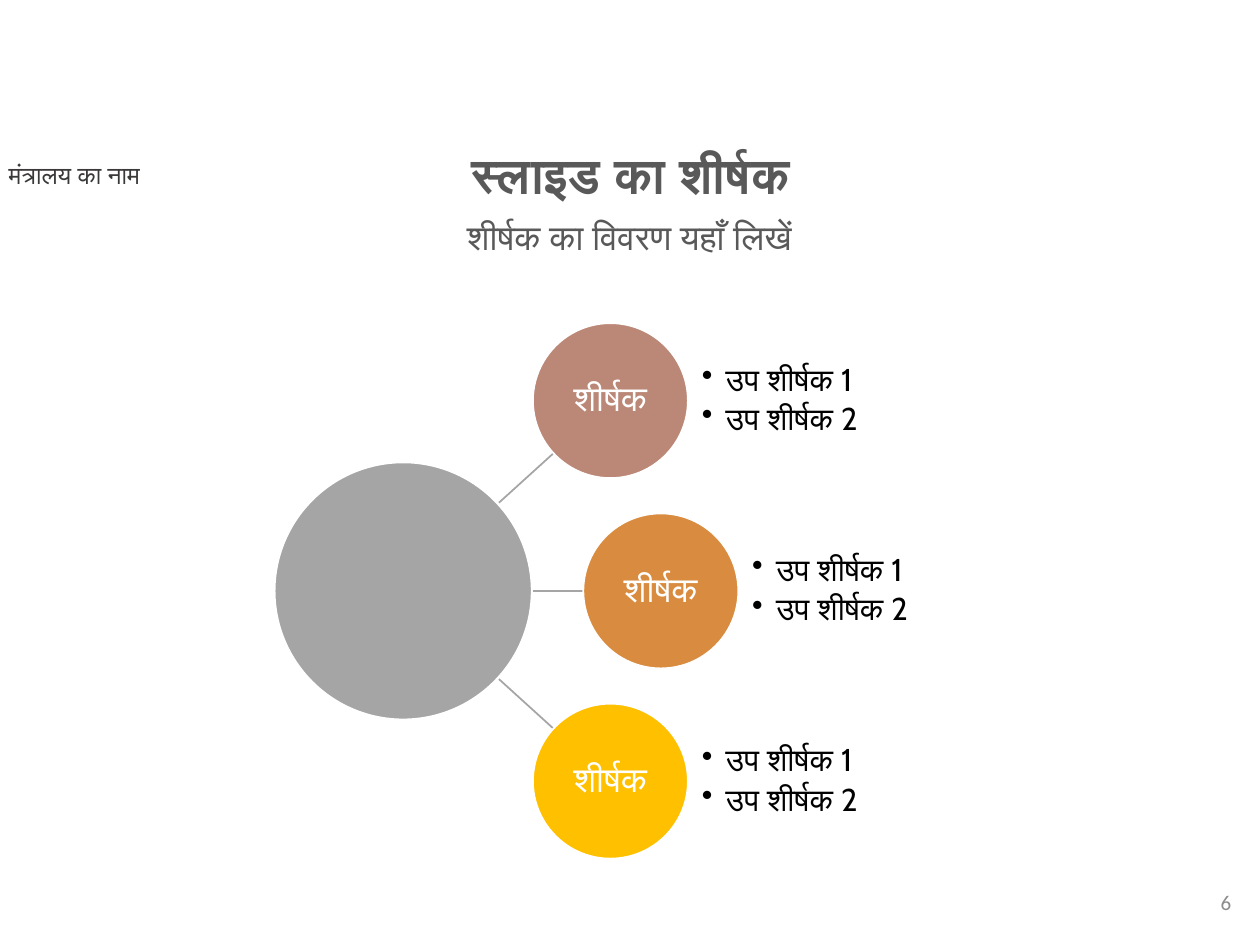
from dataclasses import dataclass

from lxml import etree
from pptx import Presentation
from pptx.dml.color import RGBColor
from pptx.enum.shapes import MSO_CONNECTOR, MSO_SHAPE
from pptx.enum.text import MSO_ANCHOR, PP_ALIGN
from pptx.oxml.ns import qn
from pptx.util import Inches, Pt

OVAL = MSO_SHAPE.OVAL
LINE = MSO_CONNECTOR.STRAIGHT
TOP, MIDDLE = MSO_ANCHOR.TOP, MSO_ANCHOR.MIDDLE
LEFT, CENTER, RIGHT = PP_ALIGN.LEFT, PP_ALIGN.CENTER, PP_ALIGN.RIGHT


@dataclass(frozen=True)
class Theme:
    body: str = "Calibri"
    accent: str = "Cabin"
    white: str = "FFFFFF"
    black: str = "000000"
    gray: str = "A5A5A5"
    dark: str = "595959"
    label: str = "3B3838"
    pale: str = "8C8C8C"
    nodes: tuple = ("BB8776", "D98C3F", "FFC000")
    title: int = 28
    head: int = 20
    item: int = 18
    name: int = 14
    page: int = 12


THEME = Theme()


def rgb(code):
    return RGBColor.from_string(code)


def style(para, font, size, color, bold=False):
    for run in para.runs:
        run.font.name = font
        run.font.size = Pt(size)
        run.font.color.rgb = rgb(color)
        run.font.bold = bold


def inset(frame, side, edge):
    frame.margin_left = frame.margin_right = Inches(side)
    frame.margin_top = frame.margin_bottom = Inches(edge)


def add_text(slide, box, text, size, color, align=LEFT, anchor=TOP,
             bold=False, space=1.0):
    frame = slide.shapes.add_textbox(*map(Inches, box)).text_frame
    frame.word_wrap = True
    frame.vertical_anchor = anchor
    para = frame.paragraphs[0]
    para.text = text
    para.alignment = align
    para.line_spacing = space
    style(para, THEME.body, size, color, bold)


def add_disc(slide, left, mid, size, color, text=""):
    disc = slide.shapes.add_shape(
        OVAL, Inches(left), Inches(mid - size / 2), Inches(size), Inches(size))
    disc.shadow.inherit = False
    disc.fill.solid()
    disc.fill.fore_color.rgb = rgb(color)
    disc.line.color.rgb = rgb(THEME.white)
    disc.line.width = Pt(1)
    if text:
        frame = disc.text_frame
        inset(frame, 0.01, 0.01)
        frame.vertical_anchor = MIDDLE
        para = frame.paragraphs[0]
        para.text = text
        para.alignment = CENTER
        para.line_spacing = 0.9
        style(para, THEME.accent, THEME.head, THEME.white)


def add_list(slide, box, items):
    frame = slide.shapes.add_textbox(*map(Inches, box)).text_frame
    frame.word_wrap = True
    frame.vertical_anchor = MIDDLE
    inset(frame, 0, 0)
    for i, item in enumerate(items):
        para = frame.add_paragraph() if i else frame.paragraphs[0]
        para.text = item
        para.line_spacing = 0.9
        para.space_after = Pt(3)
        props = para._p.get_or_add_pPr()
        props.set("marL", str(Inches(0.19)))
        props.set("indent", str(-Inches(0.19)))
        etree.SubElement(props, qn("a:buChar")).set("char", "•")
        style(para, THEME.accent, THEME.item, THEME.black)


def add_link(slide, *ends):
    link = slide.shapes.add_connector(LINE, *map(Inches, ends))
    link.line.color.rgb = rgb(THEME.gray)
    link.line.width = Pt(1)
    etree.SubElement(link._element.spPr, qn("a:effectLst"))


def main():
    deck = Presentation()
    deck.slide_width, deck.slide_height = Inches(10), Inches(7.5)
    slide = deck.slides.add_slide(deck.slide_layouts[6])

    add_text(slide, (-0.03, 1.22, 2.18, 0.34), "मंत्रालय का नाम",
             THEME.name, THEME.label)

    mid, step, size = 4.69, 1.51, 1.23
    for turn in (-1, 1):
        add_link(slide, 3.96, mid + turn * 0.7, 4.39, mid + turn * 1.09)
    add_link(slide, 4.23, mid, 4.63, mid)
    add_disc(slide, 2.18, mid, 2.04, THEME.gray)

    for i, (left, color) in enumerate(zip((4.23, 4.63, 4.23), THEME.nodes)):
        y = mid + (i - 1) * step
        add_disc(slide, left, y, size, color, "शीर्षक")
        add_list(slide, (left + 1.34, y - size / 2, 1.84, size),
                 ("उप शीर्षक 1", "उप शीर्षक 2"))

    add_text(slide, (7.62, 6.96, 2.25, 0.4), "6", THEME.page, THEME.pale,
             RIGHT, MIDDLE)
    add_text(slide, (1.46, 1.7, 7.07, 0.63), "शीर्षक का विवरण यहाँ लिखें",
             THEME.head, THEME.dark, CENTER, space=0.9)
    add_text(slide, (1.86, 1.15, 6.29, 0.47), "स्लाइड का शीर्षक",
             THEME.title, THEME.dark, CENTER, bold=True, space=0.9)
    deck.save("out.pptx")


if __name__ == "__main__":
    main()
